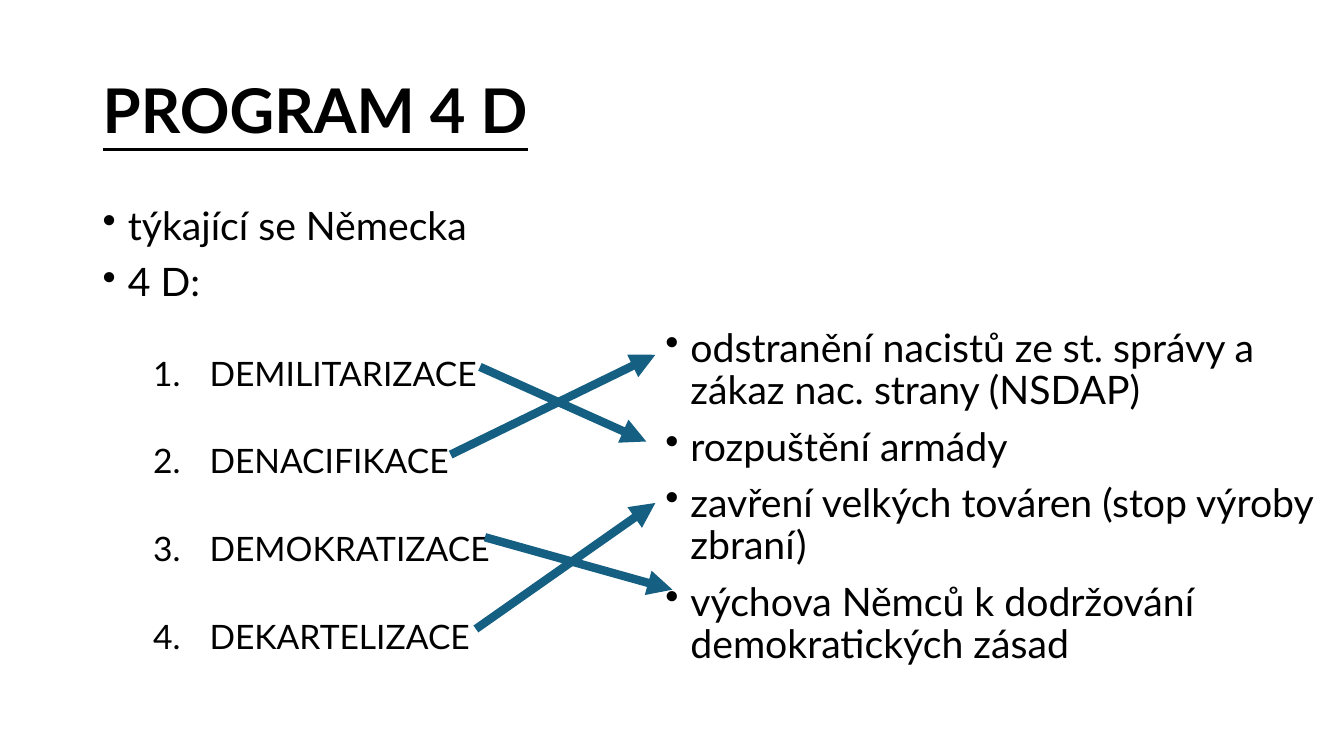
from lxml.etree import SubElement
from pptx import Presentation
from pptx.dml.color import RGBColor
from pptx.enum.shapes import MSO_CONNECTOR as CONN
from pptx.enum.text import MSO_ANCHOR as ANCHOR
from pptx.oxml.ns import qn
from pptx.util import Inches, Pt

BLACK = RGBColor(0x00, 0x00, 0x00)
WHITE = RGBColor(0xFF, 0xFF, 0xFF)
TEAL = RGBColor(0x15, 0x60, 0x82)


class Deck:
    """Holds the style and the current slide."""

    font = "Lato"

    def __init__(self, width, height):
        self.prs = Presentation()
        self.prs.slide_width, self.prs.slide_height = Inches(width), Inches(height)
        self.s = self.prs.slides.add_slide(self.prs.slide_layouts[6])
        fill = self.s.background.fill
        fill.solid()
        fill.fore_color.rgb = WHITE

    def box(self, left, top, width, height, anchor=ANCHOR.TOP):
        """Add an empty wrapping text box and return its frame."""
        sp = self.s.shapes.add_textbox(*map(Inches, (left, top, width, height)))
        tf = sp.text_frame
        tf.word_wrap = True
        tf.vertical_anchor = anchor
        return tf

    def text(self, tf, text, size=28, bold=False, underline=False, spacing=0.9,
             before=10, level=0, margin=0, hanging=0, bullet=None, number=None):
        """Add one formatted paragraph to a frame."""
        first = not tf.paragraphs[0].runs
        p = tf.paragraphs[0] if first else tf.add_paragraph()
        p.level = level
        p.line_spacing = spacing
        p.space_before = Pt(0 if first else before)
        pPr = p._p.get_or_add_pPr()
        pPr.set("marL", str(Inches(margin)))
        pPr.set("indent", str(-Inches(hanging)))
        if bullet:
            SubElement(pPr, qn("a:buChar"), char=bullet)
        elif number:
            SubElement(pPr, qn("a:buAutoNum"), type=number)
        r = p.add_run()
        r.text = text
        r.font.name, r.font.size = self.font, Pt(size)
        r.font.bold, r.font.underline = bold, underline
        r.font.color.rgb = BLACK

    def bullets(self, tf, items):
        """Add bulleted paragraphs."""
        for item in items:
            self.text(tf, item, margin=0.25, hanging=0.25, bullet="•")

    def numbers(self, tf, items):
        """Add widely spaced numbered paragraphs."""
        for item in items:
            self.text(tf, item, size=24, spacing=2, before=5, level=1,
                      margin=1.06, hanging=0.56, number="arabicPeriod")

    def arrow(self, x1, y1, x2, y2):
        """Add a thick arrow between two points."""
        c = self.s.shapes.add_connector(CONN.STRAIGHT, *map(Inches, (x1, y1, x2, y2)))
        c.line.color.rgb = TEAL
        c.line.width = Pt(6)
        SubElement(c.line._get_or_add_ln(), qn("a:tailEnd"), type="triangle")
        SubElement(c._element.spPr, qn("a:effectLst"))


def main():
    """Build the slide and save it."""
    deck = Deck(13.33, 7.5)

    title = deck.box(0.92, 0.4, 11.5, 1.45, ANCHOR.MIDDLE)
    deck.text(title, "PROGRAM 4 D", size=44, bold=True, underline=True)

    terms = deck.box(0.92, 2, 5.67, 4.76)
    deck.bullets(terms, ["týkající se Německa", "4 D:"])
    deck.numbers(terms, ["DEMILITARIZACE", "DENACIFIKACE", "DEMOKRATIZACE", "DEKARTELIZACE"])

    meanings = deck.box(6.5, 3.21, 6.83, 4.76)
    deck.bullets(meanings, [
        "odstranění nacistů ze st. správy a zákaz nac. strany (NSDAP)",
        "rozpuštění armády",
        "zavření velkých továren (stop výroby zbraní)",
        "výchova Němců k dodržování demokratických zásad",
    ])

    for ends in [(4.76, 3.64, 6.41, 4.38), (4.47, 4.51, 6.5, 3.52),
                 (4.81, 5.33, 6.67, 5.85), (4.72, 6.24, 6.5, 4.99)]:
        deck.arrow(*ends)

    deck.prs.save("out.pptx")


if __name__ == "__main__":
    main()
